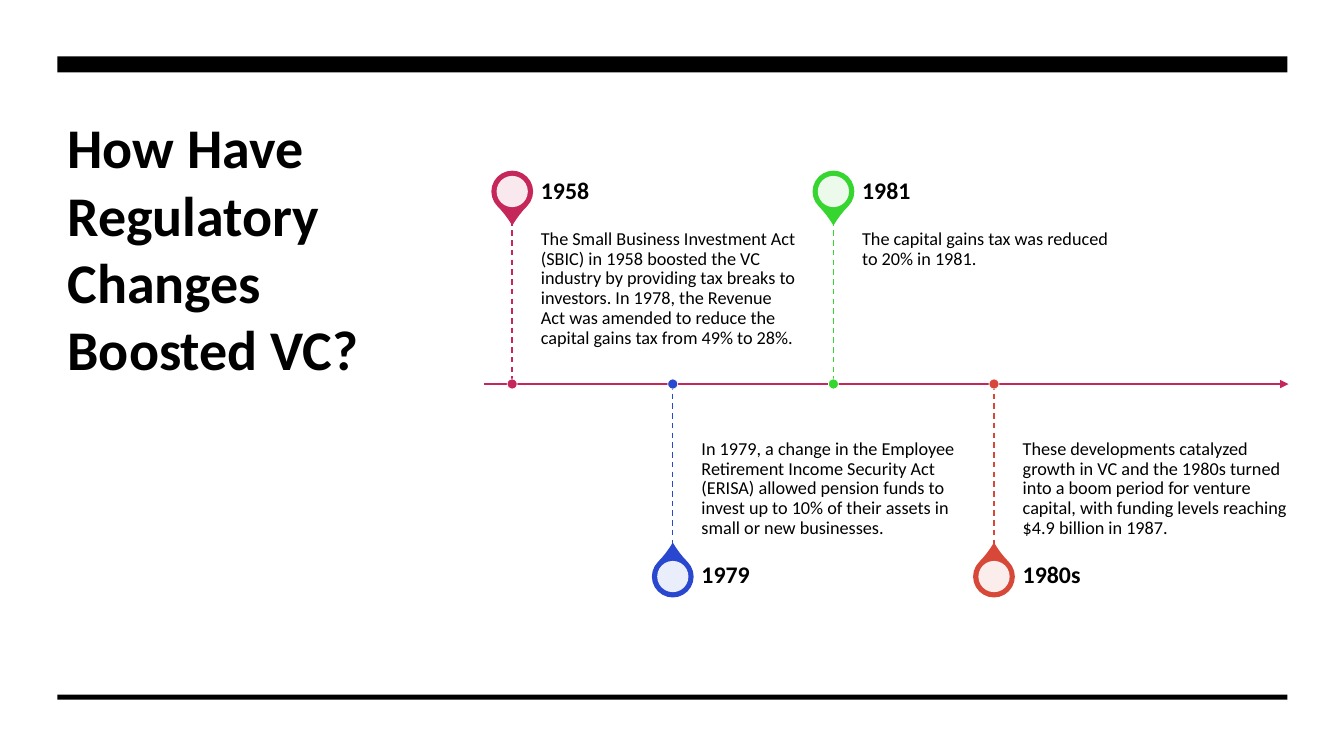
import pptx
import pptx.util
import pptx.dml.color
import pptx.enum.dml
import pptx.enum.shapes
import pptx.enum.text
import pptx.oxml
import pptx.oxml.ns

Inches = pptx.util.Inches
Pt = pptx.util.Pt
RGBColor = pptx.dml.color.RGBColor
SHAPE = pptx.enum.shapes.MSO_SHAPE
ANCHOR = pptx.enum.text.MSO_ANCHOR

BLACK = RGBColor(0x00, 0x00, 0x00)
WHITE = RGBColor(0xFF, 0xFF, 0xFF)
ROSE = RGBColor(0xC5, 0x27, 0x5A)
BLUE = RGBColor(0x29, 0x48, 0xCF)
GREEN = RGBColor(0x36, 0xD5, 0x2F)
RED = RGBColor(0xD7, 0x48, 0x39)

FONT = "Calibri"
AXIS = 3.81    # height of the time axis
FIRST = 5.08   # centre of the first event
STEP = 1.593   # distance between events
STEM = 1.62    # length of a dashed stem
HEAD = 0.57    # height of a year box
REACH = 1.91   # from the axis to the centre of a pin

EVENTS = [
    ("1958", ROSE, "The Small Business Investment Act (SBIC) in 1958 boosted "
     "the VC industry by providing tax breaks to investors. In 1978, the "
     "Revenue Act was amended to reduce the capital gains tax from 49% to 28%."),
    ("1979", BLUE, "In 1979, a change in the Employee Retirement Income "
     "Security Act (ERISA) allowed pension funds to invest up to 10% of their "
     "assets in small or new businesses."),
    ("1981", GREEN, "The capital gains tax was reduced to 20% in 1981."),
    ("1980s", RED, "These developments catalyzed growth in VC and the 1980s "
     "turned into a boom period for venture capital, with funding levels "
     "reaching $4.9 billion in 1987."),
]


def add_node(parent, tag, **attrs):
    node = pptx.oxml.parse_xml(f"<{tag} {pptx.oxml.ns.nsdecls('a')}/>")
    for name, value in attrs.items():
        node.set(name, value)
    parent.append(node)


def style_text(frame, text, size, bold, anchor, spacing):
    frame.text = text
    frame.word_wrap = True
    frame.auto_size = pptx.enum.text.MSO_AUTO_SIZE.NONE
    frame.vertical_anchor = anchor
    para = frame.paragraphs[0]
    para.alignment = pptx.enum.text.PP_ALIGN.LEFT
    para.line_spacing = spacing
    font = para.runs[0].font
    font.name, font.size, font.bold = FONT, Pt(size), bold
    font.color.rgb = BLACK


def add_text(slide, left, top, height, text, size, bold, anchor, insets):
    box = slide.shapes.add_textbox(
        Inches(left), Inches(top), Inches(2.64), Inches(height))
    frame = box.text_frame
    style_text(frame, text, size, bold, anchor, 0.9)
    (frame.margin_left, frame.margin_top, frame.margin_right,
     frame.margin_bottom) = map(Inches, insets)


def add_solid(slide, kind, left, top, width, height, fill, edge=None, weight=1):
    shape = slide.shapes.add_shape(
        kind, Inches(left), Inches(top), Inches(width), Inches(height))
    shape.shadow.inherit = False
    shape.fill.solid()
    shape.fill.fore_color.rgb = fill
    if edge is None:
        shape.line.fill.background()
    else:
        shape.line.color.rgb = edge
        shape.line.width = Pt(weight)
    return shape


def add_disc(slide, x, y, size, fill, edge=None, weight=1):
    return add_solid(slide, SHAPE.OVAL, x - size / 2, y - size / 2,
                     size, size, fill, edge, weight)


def add_line(slide, x1, y1, x2, y2, color, weight, dash=False, arrow=False):
    line = slide.shapes.add_connector(
        pptx.enum.shapes.MSO_CONNECTOR.STRAIGHT,
        Inches(x1), Inches(y1), Inches(x2), Inches(y2))
    line.line.color.rgb = color
    line.line.width = Pt(weight)
    if dash:
        line.line.dash_style = pptx.enum.dml.MSO_LINE.DASH
    if arrow:
        add_node(line.line._get_or_add_ln(), "a:tailEnd", type="triangle")
    add_node(line._element.spPr, "a:effectLst")


def add_pin(slide, x, y, turn, color):
    drop = add_solid(slide, SHAPE.TEAR, x - 0.2, y - 0.2, 0.4, 0.4, color, color)
    drop.adjustments[0] = 1.15
    drop.rotation = turn
    disc = add_disc(slide, x, y, 0.31, WHITE)
    tint = disc._element.spPr.find(".//" + pptx.oxml.ns.qn("a:srgbClr"))
    add_node(tint, "a:alpha", val="90000")


def add_event(slide, x, above, year, color, text):
    side = -1 if above else 1
    add_pin(slide, x, AXIS + side * REACH, 135 if above else 315, color)
    # Story next to the stem, year next to the pin
    if above:
        story, label = AXIS - STEM, AXIS - STEM - HEAD
        anchor, insets = ANCHOR.TOP, (0, 0.09, 0.09, 0.14)
    else:
        story, label = AXIS, AXIS + STEM
        anchor, insets = ANCHOR.BOTTOM, (0, 0.14, 0, 0.09)
    left = x + 0.285
    add_text(slide, left, story, STEM, text, 13, False, anchor, insets)
    add_text(slide, left, label, HEAD, year, 17, True, ANCHOR.MIDDLE,
             (0, 0, 0.12, 0))
    # Stem and dot on the axis
    end = AXIS + side * STEM
    add_line(slide, x, min(AXIS, end), x, max(AXIS, end), color, 1, dash=True)
    add_disc(slide, x, AXIS, 0.1, color, WHITE, 0.5)


def add_title(slide, text):
    title = slide.shapes.title
    title.left, title.top = Inches(0.57), Inches(1.07)
    title.width, title.height = Inches(3.45), Inches(4.45)
    style_text(title.text_frame, text, 40, True, ANCHOR.TOP, 1.0)


def main():
    deck = pptx.Presentation()
    deck.slide_width, deck.slide_height = Inches(13.33), Inches(7.5)
    slide = deck.slides.add_slide(deck.slide_layouts[5])
    slide.background.fill.solid()
    slide.background.fill.fore_color.rgb = WHITE

    # Title and black bars
    add_title(slide, "How Have Regulatory Changes Boosted VC?")
    for top, height in ((0.56, 0.16), (6.89, 0.05)):
        add_solid(slide, SHAPE.RECTANGLE, 0.57, top, 12.2, height, BLACK)

    # Timeline, events alternating above and below the axis
    add_line(slide, 4.8, AXIS, 12.78, AXIS, ROSE, 1.5, arrow=True)
    for i, (year, color, text) in enumerate(EVENTS):
        add_event(slide, FIRST + i * STEP, i % 2 == 0, year, color, text)

    deck.save("out.pptx")


if __name__ == "__main__":
    main()
